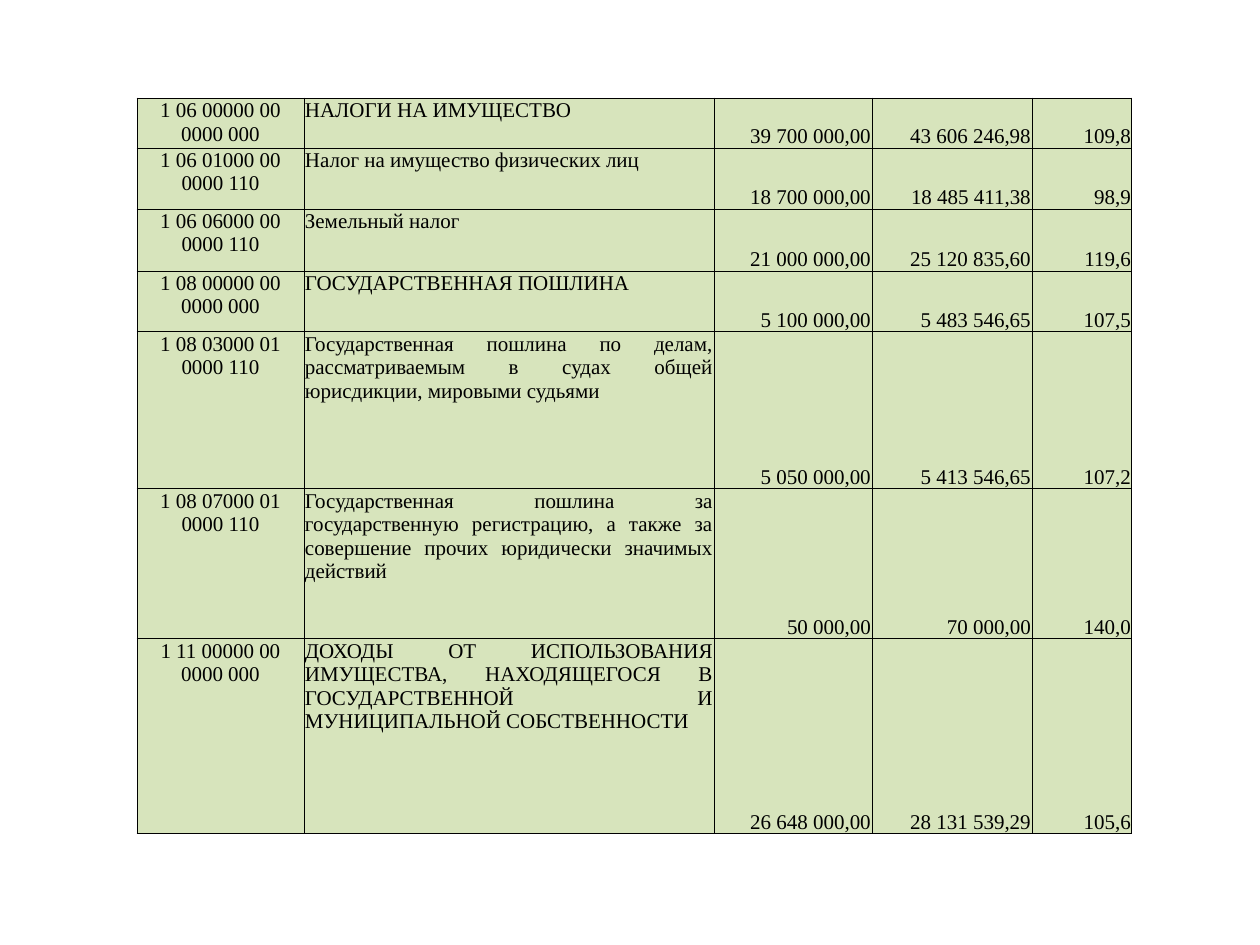
from pptx import Presentation
from pptx.dml.color import RGBColor
from pptx.enum.text import MSO_ANCHOR, PP_ALIGN
from pptx.oxml import parse_xml
from pptx.oxml.ns import nsdecls
from pptx.util import Pt

PX = 914400 // 126
COLORS = {"fill": "D7E4BC", "ink": "000000"}
FONT = "Times New Roman"

COLS = [167, 410, 158, 160, 100]
ALIGNS = [PP_ALIGN.CENTER, PP_ALIGN.JUSTIFY] + [PP_ALIGN.RIGHT] * 3
ANCHORS = [MSO_ANCHOR.TOP] * 2 + [MSO_ANCHOR.BOTTOM] * 3

# Row height, then code, name, plan, actual and percent
ROWS = [
    (50, "1 06 00000 00 0000 000", "НАЛОГИ НА ИМУЩЕСТВО",
     "39 700 000,00", "43 606 246,98", "109,8"),
    (61, "1 06 01000 00 0000 110", "Налог на имущество физических лиц",
     "18 700 000,00", "18 485 411,38", "98,9"),
    (62, "1 06 06000 00 0000 110", "Земельный налог",
     "21 000 000,00", "25 120 835,60", "119,6"),
    (61, "1 08 00000 00 0000 000", "ГОСУДАРСТВЕННАЯ ПОШЛИНА",
     "5 100 000,00", "5 483 546,65", "107,5"),
    (157, "1 08 03000 01 0000 110",
     "Государственная пошлина по делам, рассматриваемым в судах общей "
     "юрисдикции, мировыми судьями",
     "5 050 000,00", "5 413 546,65", "107,2"),
    (150, "1 08 07000 01 0000 110",
     "Государственная пошлина за государственную регистрацию, а также за "
     "совершение прочих юридически значимых действий",
     "50 000,00", "70 000,00", "140,0"),
    (195, "1 11 00000 00 0000 000",
     "ДОХОДЫ ОТ ИСПОЛЬЗОВАНИЯ ИМУЩЕСТВА, НАХОДЯЩЕГОСЯ В "
     "ГОСУДАРСТВЕННОЙ И МУНИЦИПАЛЬНОЙ СОБСТВЕННОСТИ",
     "26 648 000,00", "28 131 539,29", "105,6"),
]


def color(name):
    return RGBColor.from_string(COLORS[name])


def border(cell):
    props = cell._tc.get_or_add_tcPr()
    for side in "LRTB":
        props.append(parse_xml(
            f'<a:ln{side} {nsdecls("a")} w="{Pt(0.5)}"><a:solidFill>'
            f'<a:srgbClr val="{COLORS["ink"]}"/></a:solidFill></a:ln{side}>'))


def style(cell, text, align, anchor):
    # Borders come before the fill in the cell properties
    border(cell)
    cell.fill.solid()
    cell.fill.fore_color.rgb = color("fill")
    cell.margin_left = cell.margin_right = cell.margin_top = PX
    cell.margin_bottom = 0
    cell.vertical_anchor = anchor
    cell.text_frame.text = text
    para = cell.text_frame.paragraphs[0]
    para.alignment = align
    font = para.runs[0].font
    font.name, font.size = FONT, Pt(12)
    font.color.rgb = color("ink")


def budget(slide, left, top, width, height):
    frame = slide.shapes.add_table(
        len(ROWS), len(COLS), left * PX, top * PX, width * PX, height * PX)
    table = frame.table
    table.first_row = table.horz_banding = False
    for col, size in zip(table.columns, COLS):
        col.width = size * PX
    for row, (size, *texts) in zip(table.rows, ROWS):
        row.height = size * PX
        for parts in zip(row.cells, texts, ALIGNS, ANCHORS):
            style(*parts)


def main():
    deck = Presentation()
    deck.slide_width, deck.slide_height = 1260 * PX, 945 * PX
    slide = deck.slides.add_slide(deck.slide_layouts[6])
    # Revenue table
    budget(slide, 137, 98, sum(COLS), sum(row[0] for row in ROWS))
    deck.save("out.pptx")


if __name__ == "__main__":
    main()
